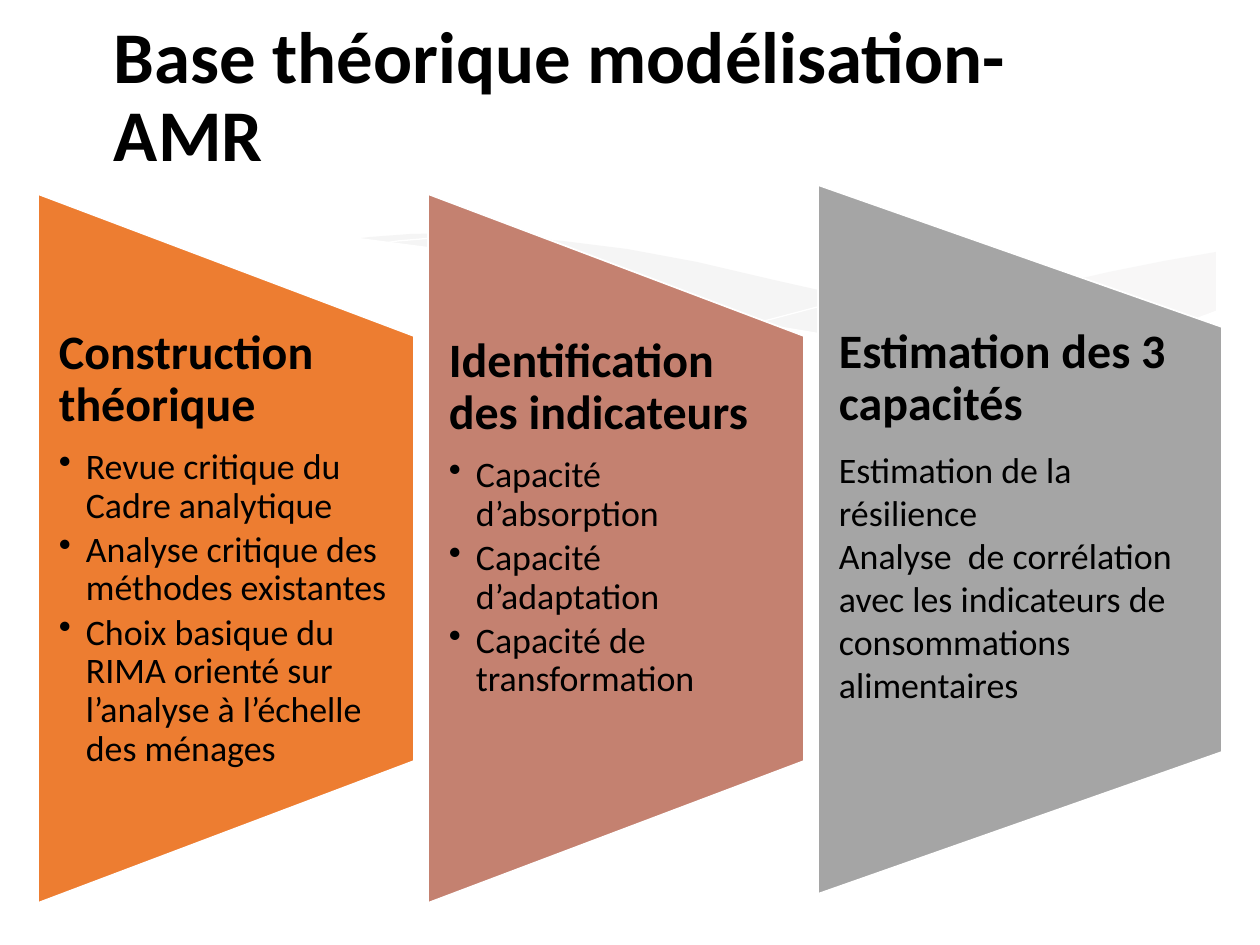
from lxml import etree
from pptx import Presentation
from pptx.dml.color import RGBColor
from pptx.enum.text import MSO_ANCHOR
from pptx.oxml.ns import qn
from pptx.util import Pt

SCALE = 914400 / 126
FONT = "Calibri"
TOP, MIDDLE = MSO_ANCHOR.TOP, MSO_ANCHOR.MIDDLE
COLORS = {
    "text": "000000",
    "white": "FFFFFF",
    "wave": "E7E6E6",
    "theory": "ED7D31",
    "indicators": "C48170",
    "capacities": "A5A5A5",
}

RIGHT_WAVE = [
    (1216, 252), (1164, 261), (1109, 272), (1070, 281), (965, 305),
    (872, 324), (815, 334), (888, 343), (953, 349), (1009, 350),
    (1084, 345), (1147, 334), (1183, 324), (1216, 311),
]
LEFT_WAVE = [
    (1110, 344), (1040, 334), (960, 320), (872, 302), (774, 280),
    (697, 262), (627, 249), (563, 241), (507, 236), (455, 233),
    (410, 234), (370, 237), (336, 241), (407, 251), (486, 266),
    (544, 280), (646, 302), (738, 321), (820, 335), (910, 347),
    (1000, 350), (1065, 349),
]
FALLING_LINE = [
    (365, 246), (398, 241), (433, 238), (483, 236), (546, 237), (621, 242),
    (713, 252), (819, 268), (898, 285), (985, 304), (1080, 329), (1129, 343),
]
RISING_LINE = [
    (753, 324), (829, 304), (891, 289), (961, 272), (1038, 257),
    (1114, 244), (1168, 237), (1216, 233),
]
WHITE_WAVE = [
    (1218, 310), (1183, 323), (1120, 341), (1040, 348), (942, 346),
    (849, 338), (741, 320), (646, 301), (541, 277), (436, 248),
    (344, 236), (241, 232), (156, 234), (92, 241), (45, 251),
    (16, 260), (0, 268), (0, 415), (1218, 415),
]

PANELS = [
    dict(
        left=38, top=194, width=376, color="theory", anchor=MIDDLE,
        heading="Construction théorique", bulleted=True,
        items=[
            "Revue critique du Cadre analytique",
            "Analyse critique des méthodes existantes",
            "Choix basique du RIMA orienté sur l’analyse à l’échelle des ménages",
        ],
    ),
    dict(
        left=428, top=194, width=376, color="indicators", anchor=TOP,
        heading="Identification des indicateurs", bulleted=True,
        items=[
            "Capacité d’absorption",
            "Capacité  d’adaptation",
            "Capacité de transformation",
        ],
    ),
    dict(
        left=818, top=185, width=404, color="capacities", anchor=TOP,
        heading="Estimation des 3 capacités", bulleted=False,
        items=[
            "Estimation de la résilience",
            "Analyse  de corrélation avec les indicateurs de consommations alimentaires",
        ],
    ),
]


def px(value):
    return round(value * SCALE)


def rgb(name):
    return RGBColor.from_string(COLORS[name])


def add_outline(page, points, fill=None, opacity=None, line=None, line_width=0, closed=True):
    builder = page.shapes.build_freeform(*points[0], scale=SCALE)
    builder.add_line_segments(points[1:], close=closed)
    shape = builder.convert_to_shape()
    shape.shadow.inherit = False
    if fill:
        shape.fill.solid()
        shape.fill.fore_color.rgb = rgb(fill)
    else:
        shape.fill.background()
    if opacity:
        color = shape.fill._xPr.find(qn("a:solidFill"))[0]
        etree.SubElement(color, qn("a:alpha")).set("val", str(opacity * 1000))
    if line:
        shape.line.color.rgb = rgb(line)
        shape.line.width = Pt(line_width)
    else:
        shape.line.fill.background()
    return shape


def prepare_frame(box, anchor, side, vertical):
    frame = box.text_frame
    frame.word_wrap = True
    frame.vertical_anchor = anchor
    frame.margin_left = frame.margin_right = px(side)
    frame.margin_top = frame.margin_bottom = px(vertical)
    return frame


def add_text(frame, text, size, bold=False, spacing=0.9, after=0, bullet=False):
    first = frame.paragraphs[0]
    para = frame.add_paragraph() if first.runs else first
    para.alignment = 1
    para.line_spacing = spacing
    para.space_before = Pt(0)
    para.space_after = Pt(after)
    if bullet:
        properties = para._p.get_or_add_pPr()
        properties.set("marL", str(px(27)))
        properties.set("indent", str(px(-27)))
        etree.SubElement(properties, qn("a:buChar")).set("char", "•")
    span = para.add_run()
    span.text = text
    span.font.name = FONT
    span.font.size = Pt(size)
    span.font.bold = bold
    span.font.color.rgb = rgb("text")


def add_waves(page):
    add_outline(page, RIGHT_WAVE, fill="wave", opacity=29)
    add_outline(page, LEFT_WAVE, fill="wave", opacity=40)
    for points in (FALLING_LINE, RISING_LINE):
        add_outline(page, points, line="white", closed=False)
    add_outline(page, WHITE_WAVE, fill="white")


def add_title(page, text):
    box = page.shapes.add_textbox(px(101), px(50), px(1060), px(98))
    add_text(prepare_frame(box, MIDDLE, side=13, vertical=6), text, size=41.6, bold=True)


def add_panel(page, left, top, width, color, anchor, heading, items, bulleted):
    height, slope = 709, 142
    right, bottom = left + width, top + height
    points = [(left, bottom), (left, top), (right, top + slope), (right, bottom - slope)]
    shape = add_outline(page, points, fill=color, line="white", line_width=1)
    frame = prepare_frame(shape, anchor, side=21, vertical=slope)
    add_text(frame, heading, size=27.4, bold=True, after=9.6)
    for item in items:
        if bulleted:
            add_text(frame, item, size=20.5, after=3.1, bullet=True)
        else:
            add_text(frame, item, size=20.5, spacing=1.0)


def main():
    deck = Presentation()
    deck.slide_width, deck.slide_height = px(1260), px(945)
    page = deck.slides.add_slide(deck.slide_layouts[6])
    add_waves(page)
    add_title(page, "Base théorique modélisation-AMR")
    for panel in PANELS:
        add_panel(page, **panel)
    deck.save("out.pptx")


if __name__ == "__main__":
    main()
